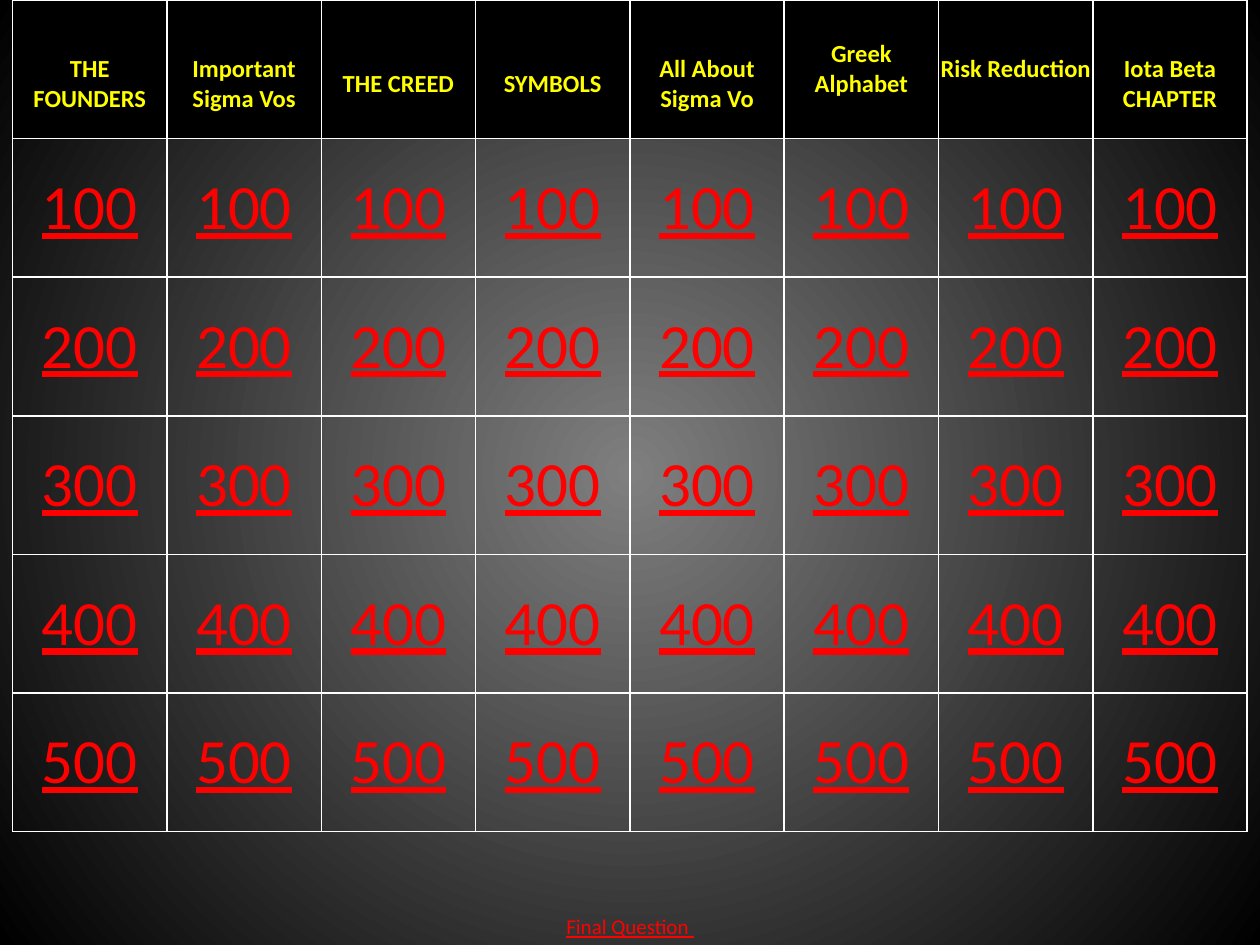
import pptx
import pptx.util
import pptx.oxml
import pptx.oxml.ns
import pptx.dml.color
import pptx.enum.text

Inches = pptx.util.Inches
Pt = pptx.util.Pt

COLORS = {"center": "7F7F7F", "edge": "000000", "grid": "FFFFFF",
          "category": "FFFF00", "value": "FF0000"}
# Each category: its lines, and whether they sit one line lower in the cell.
CATEGORIES = [
    (["THE FOUNDERS"], True),
    (["Important", "Sigma Vos"], True),
    (["THE CREED"], True),
    (["SYMBOLS"], True),
    (["All About Sigma Vo"], True),
    (["Greek Alphabet"], False),
    (["Risk Reduction"], False),
    (["Iota Beta", "CHAPTER"], True),
]
VALUES = range(100, 600, 100)
LINE_DROP = 0.24


class Board:
    """Holds the text style and the slide being filled."""

    def __init__(self, slide, font="Calibri"):
        self.slide = slide
        self.font = font

    def background(self):
        """Radial gradient from the slide's center to its edges."""
        background = pptx.oxml.parse_xml(
            f'<p:bg {pptx.oxml.ns.nsdecls("p", "a")}><p:bgPr>'
            '<a:gradFill rotWithShape="1"><a:gsLst>'
            f'<a:gs pos="0"><a:srgbClr val="{COLORS["center"]}"/></a:gs>'
            f'<a:gs pos="100000"><a:srgbClr val="{COLORS["edge"]}"/></a:gs>'
            '</a:gsLst><a:path path="circle">'
            '<a:fillToRect l="50000" t="50000" r="50000" b="50000"/>'
            '</a:path></a:gradFill><a:effectLst/></p:bgPr></p:bg>')
        self.slide.element.cSld.insert(0, background)

    def add_lines(self, frame, lines, size, color, bold=False, underline=False):
        for index, line in enumerate(lines):
            paragraph = frame.add_paragraph() if index else frame.paragraphs[0]
            paragraph.alignment = pptx.enum.text.PP_ALIGN.CENTER
            run = paragraph.add_run()
            run.text = line
            run.font.name = self.font
            run.font.size = Pt(size)
            run.font.bold = bold
            run.font.underline = underline
            run.font.color.rgb = pptx.dml.color.RGBColor.from_string(COLORS[color])

    def borders(self, cell, width=1):
        properties = cell._tc.get_or_add_tcPr()
        for index, side in enumerate(("lnL", "lnR", "lnT", "lnB")):
            properties.insert(index, pptx.oxml.parse_xml(
                f'<a:{side} {pptx.oxml.ns.nsdecls("a")} w="{Pt(width)}"><a:solidFill>'
                f'<a:srgbClr val="{COLORS["grid"]}"/></a:solidFill></a:{side}>'))

    def cell(self, cell, lines, size, color, fill=None, drop=0, **style):
        cell.margin_left = cell.margin_right = cell.margin_bottom = 0
        cell.margin_top = Inches(drop)
        cell.vertical_anchor = pptx.enum.text.MSO_ANCHOR.MIDDLE
        if fill:
            cell.fill.solid()
            cell.fill.fore_color.rgb = pptx.dml.color.RGBColor.from_string(COLORS[fill])
        else:
            cell.fill.background()
        self.borders(cell)
        self.add_lines(cell.text_frame, lines, size, color, **style)

    def grid(self, left, top, width, height):
        """Categories across the top, one row of point values for each amount."""
        grid = self.slide.shapes.add_table(
            len(VALUES) + 1, len(CATEGORIES), Inches(left), Inches(top),
            Inches(width), Inches(height)).table
        grid.first_row = grid.horz_banding = False
        for column, (lines, lowered) in enumerate(CATEGORIES):
            self.cell(grid.cell(0, column), lines, 14, "category", fill="edge",
                      drop=LINE_DROP if lowered else 0, bold=True)
            for row, value in enumerate(VALUES, 1):
                self.cell(grid.cell(row, column), [str(value)], 36, "value",
                          underline=True)

    def label(self, left, top, width, height, text, size):
        frame = self.slide.shapes.add_textbox(
            Inches(left), Inches(top), Inches(width), Inches(height)).text_frame
        frame.word_wrap = True
        frame.auto_size = pptx.enum.text.MSO_AUTO_SIZE.SHAPE_TO_FIT_TEXT
        self.add_lines(frame, [text], size, "value", underline=True)


def main():
    deck = pptx.Presentation()
    deck.slide_width, deck.slide_height = Inches(10), Inches(7.5)
    board = Board(deck.slides.add_slide(deck.slide_layouts[6]))
    board.background()
    board.grid(0.1, 0, 9.8, 6.6)
    board.label(3.9, 7.2, 2.2, 0.3, "Final Question ", 12)
    deck.save("out.pptx")


if __name__ == "__main__":
    main()
